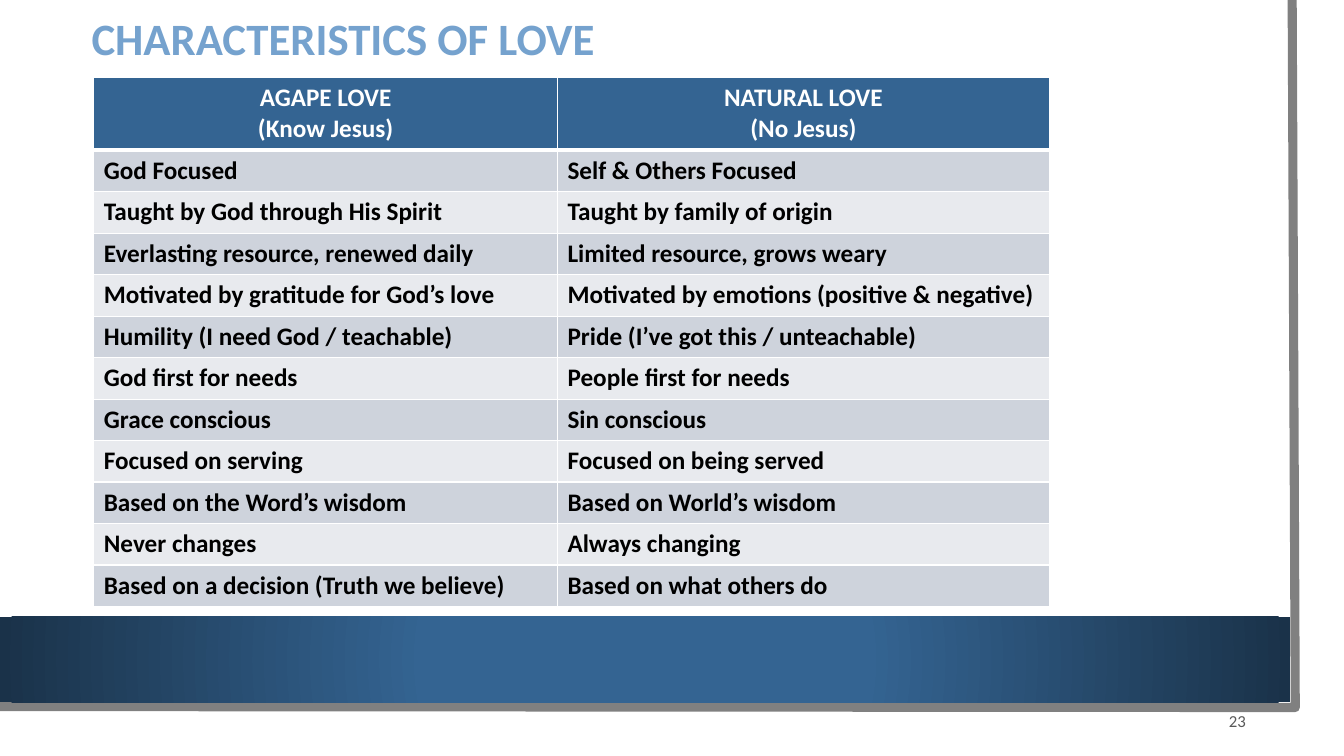
"""Build the slide comparing the characteristics of agape and natural love."""
from lxml.etree import SubElement
from pptx import Presentation
from pptx.dml.color import RGBColor
from pptx.enum.text import MSO_ANCHOR as Anchor, PP_ALIGN as Align
from pptx.enum.shapes import MSO_SHAPE as Shape
from pptx.oxml import parse_xml
from pptx.oxml.ns import nsdecls, qn
from pptx.util import Pt

FONT = "Calibri"
COLORS = {
    "white": "FFFFFF", "black": "000000", "frame": "808080",
    "blue": "346492", "navy": "1A3249", "title": "75A2CE",
    "odd": "CED3DC", "even": "E8EAEE", "number": "595959",
}
HEADINGS = ("AGAPE LOVE\n(Know Jesus)", "NATURAL LOVE\n(No Jesus)")
COMPARISONS = [
    ("God Focused", "Self & Others Focused"),
    ("Taught by God through His Spirit", "Taught by family of origin"),
    ("Everlasting resource, renewed daily", "Limited resource, grows weary"),
    ("Motivated by gratitude for God’s love", "Motivated by emotions (positive & negative)"),
    ("Humility (I need God / teachable)", "Pride (I’ve got this / unteachable)"),
    ("God first for needs", "People first for needs"),
    ("Grace conscious", "Sin conscious"),
    ("Focused on serving", "Focused on being served"),
    ("Based on the Word’s wisdom", "Based on World’s wisdom"),
    ("Never changes", "Always changing"),
    ("Based on a decision (Truth we believe)", "Based on what others do"),
]


def color(name):
    return RGBColor.from_string(COLORS[name])


def style(paragraph, size, color_name, bold=True, align=Align.LEFT):
    paragraph.alignment = align
    font = paragraph.font
    font.name, font.size, font.bold = FONT, Pt(size), bold
    font.color.rgb = color(color_name)


def add_rectangle(slide, left, top, width, height):
    shape = slide.shapes.add_shape(
        Shape.RECTANGLE, Pt(left), Pt(top), Pt(width), Pt(height))
    shape.shadow.inherit = False
    shape.line.fill.background()
    return shape


def add_paper(slide):
    paper = add_rectangle(slide, 0, 0, 943, 523.5)
    paper.fill.solid()
    paper.fill.fore_color.rgb = color("white")


def add_frame(slide):
    builder = slide.shapes.build_freeform(Pt(923), Pt(0))
    corners = [(Pt(925.2), Pt(505.4)), (Pt(-2.2), Pt(504.7))]
    builder.add_line_segments(corners, close=False)
    frame = builder.convert_to_shape()
    frame.shadow.inherit = False
    frame.fill.background()
    frame.line.color.rgb = color("frame")
    frame.line.width = Pt(6.5)


def add_band(slide):
    band = add_rectangle(slide, 0, 440.6, 921.6, 61.2)
    band.fill.gradient()
    stops = zip(band.fill.gradient_stops, ((0.34, "blue"), (1, "navy")))
    for stop, (position, name) in stops:
        stop.position = position
        stop.color.rgb = color(name)
    linear = band.fill._xPr.find(".//" + qn("a:lin"))
    linear.getparent().replace(linear, parse_xml(
        f'<a:path {nsdecls("a")} path="circle">'
        '<a:fillToRect l="50000" t="50000" r="50000" b="50000"/></a:path>'))


def add_text(slide, text, left, top, width, height, wrap=True):
    box = slide.shapes.add_textbox(Pt(left), Pt(top), Pt(width), Pt(height))
    frame = box.text_frame
    frame.word_wrap = wrap
    frame.vertical_anchor = Anchor.MIDDLE
    frame.text = text
    return frame


def add_borders(cell, bottom):
    properties = cell._tc.get_or_add_tcPr()
    for side, width in (("lnL", 1), ("lnR", 1), ("lnT", 1), ("lnB", bottom)):
        border = SubElement(properties, qn("a:" + side), w=str(Pt(width)))
        fill = SubElement(border, qn("a:solidFill"))
        SubElement(fill, qn("a:srgbClr"), val=COLORS["white"])


def fill_cell(cell, text, fill, text_color, align, bottom=1):
    add_borders(cell, bottom)
    cell.fill.solid()
    cell.fill.fore_color.rgb = color(fill)
    cell.text = text
    for paragraph in cell.text_frame.paragraphs:
        style(paragraph, 18, text_color, align=align)


def add_comparison_table(slide):
    table = slide.shapes.add_table(
        len(COMPARISONS) + 1, 2, Pt(67), Pt(55.6), Pt(682.6), Pt(378)).table
    for column, width in zip(table.columns, (331.2, 351.4)):
        column.width = Pt(width)
    for index, row in enumerate(table.rows):
        row.height = Pt(29.65 if index else 51.8)
    for column, heading in enumerate(HEADINGS):
        fill_cell(table.cell(0, column), heading, "blue", "white", Align.CENTER, 3)
    for row, texts in enumerate(COMPARISONS, 1):
        for column, text in enumerate(texts):
            fill = "odd" if row % 2 else "even"
            fill_cell(table.cell(row, column), text, fill, "black", Align.LEFT)


def main():
    presentation = Presentation()
    presentation.slide_width, presentation.slide_height = Pt(960), Pt(540)
    slide = presentation.slides.add_slide(presentation.slide_layouts[6])
    add_paper(slide)
    add_frame(slide)
    add_band(slide)
    title = add_text(slide, "CHARACTERISTICS OF LOVE", 58.3, 7.9, 817, 42.5)
    title.paragraphs[0].line_spacing = 0.9
    style(title.paragraphs[0], 32, "title")
    add_comparison_table(slide)
    number = add_text(slide, "23", 874, 504, 19.5, 21.6, wrap=False)
    number.margin_left = number.margin_right = Pt(3.6)
    style(number.paragraphs[0], 12, "number", bold=False, align=Align.RIGHT)
    presentation.save("out.pptx")


if __name__ == "__main__":
    main()
